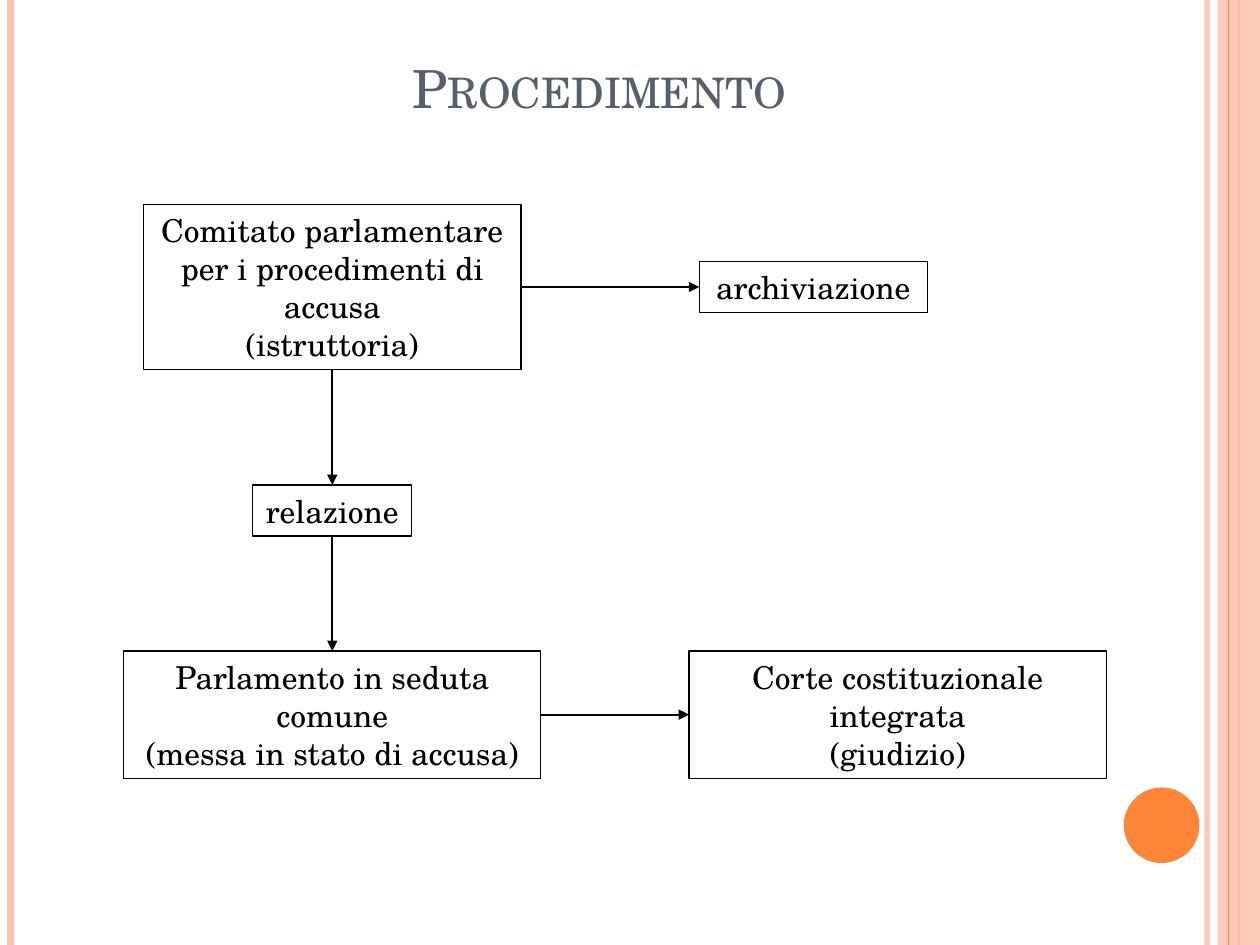
from lxml.etree import SubElement
from pptx import Presentation
from pptx.dml.color import RGBColor
from pptx.enum.shapes import MSO_CONNECTOR, MSO_SHAPE
from pptx.enum.text import MSO_ANCHOR, MSO_AUTO_SIZE, PP_ALIGN
from pptx.oxml.ns import qn
from pptx.util import Pt

TOP, LEFT, BOTTOM, RIGHT = range(4)
PEACH, ORANGE, SLATE, BLACK = "FEC3AE", "FE8637", "575F6D", "000000"


def color(code):
    return RGBColor.from_string(code)


def apply(item, values):
    for name, value in values.items():
        setattr(item, name, value)


def fade(part, percent):
    for tone in part.iter(qn("a:srgbClr")):
        SubElement(tone, qn("a:alpha"), val=str(percent * 1000))


class Board:
    face = "TeX Gyre Schola"
    frame = {"word_wrap": True, "vertical_anchor": MSO_ANCHOR.MIDDLE,
             "auto_size": MSO_AUTO_SIZE.SHAPE_TO_FIT_TEXT}

    def __init__(self, slide):
        self.slide = slide
        self.shapes = slide.shapes

    def stroke(self, line, code, width):
        line.color.rgb = color(code)
        line.width = Pt(width)

    def label(self, shape, lines, size, code, **frame):
        text = shape.text_frame
        apply(text, {**self.frame, **frame})
        text.text = "\n".join(lines)
        for para in text.paragraphs:
            para.alignment = PP_ALIGN.CENTER
            for run in para.runs:
                apply(run.font, {"name": self.face, "size": Pt(size)})
                run.font.color.rgb = color(code)

    def title(self, words, *place):
        shape = self.shapes.add_textbox(*map(Pt, place))
        self.label(shape, [words], 30, SLATE, auto_size=MSO_AUTO_SIZE.NONE,
                   vertical_anchor=MSO_ANCHOR.BOTTOM)
        run = shape.text_frame.paragraphs[0].runs[0]
        run._r.get_or_add_rPr().set("cap", "small")

    def solid(self, kind, code, *place, alpha=None):
        shape = self.shapes.add_shape(kind, *map(Pt, place))
        shape.shadow.inherit = False
        shape.fill.solid()
        shape.fill.fore_color.rgb = color(code)
        shape.line.fill.background()
        if alpha:
            fade(shape._element.spPr, alpha)

    def box(self, lines, x, y, width, height):
        place = x - width / 2, y - height / 2, width, height
        shape = self.shapes.add_shape(MSO_SHAPE.RECTANGLE, *map(Pt, place))
        shape.shadow.inherit = False
        shape.fill.background()
        self.stroke(shape.line, BLACK, 0.75)
        self.label(shape, lines, 18, BLACK, word_wrap=len(lines) > 1)
        return shape

    def link(self, code, width, *ends):
        line = self.shapes.add_connector(MSO_CONNECTOR.STRAIGHT, *map(Pt, ends))
        self.stroke(line.line, code, width)
        SubElement(line._element.spPr, qn("a:effectLst"))
        return line

    def stripe(self, x, code, width, alpha=None):
        line = self.link(code, width, x, 0, x, 540)
        if alpha:
            fade(line._element.spPr, alpha)

    def arrow(self, start, side, end, goal):
        line = self.link(BLACK, 1, 0, 0, 0, 0)
        line.begin_connect(start, side)
        line.end_connect(end, goal)
        stroke = line._element.spPr.find(qn("a:ln"))
        SubElement(stroke, qn("a:tailEnd"), type="triangle")


def main():
    deck = Presentation()
    apply(deck, {"slide_width": Pt(720), "slide_height": Pt(540)})
    board = Board(deck.slides.add_slide(deck.slide_layouts[6]))

    board.stripe(689.8, PEACH, 3, 93)
    board.stripe(6, PEACH, 4.5)
    board.stripe(708, ORANGE, 1.5)
    board.solid(MSO_SHAPE.RECTANGLE, PEACH, 696, 0, 24, 540, alpha=87)
    board.stripe(702, ORANGE, 0.75)
    board.solid(MSO_SHAPE.OVAL, ORANGE, 642.2, 450, 43.2, 43.2)
    board.title("Procedimento", 36, 21.6, 613.4, 49.7)

    main_x, upper, lower = 189.9, 164, 408.4
    panel = board.box(["Comitato parlamentare per i procedimenti di accusa",
                       "(istruttoria)"], main_x, upper, 215.6, 94.5)
    close = board.box(["archiviazione"], 464.8, upper, 130.4, 29.1)
    report = board.box(["relazione"], main_x, 291.7, 91, 29.1)
    house = board.box(["Parlamento in seduta comune",
                       "(messa in stato di accusa)"], main_x, lower, 238.4, 72.7)
    court = board.box(["Corte costituzionale integrata", "(giudizio)"],
                      513, lower, 238.4, 72.7)

    board.arrow(panel, RIGHT, close, LEFT)
    board.arrow(panel, BOTTOM, report, TOP)
    board.arrow(report, BOTTOM, house, TOP)
    board.arrow(house, RIGHT, court, LEFT)
    deck.save("out.pptx")


if __name__ == "__main__":
    main()
